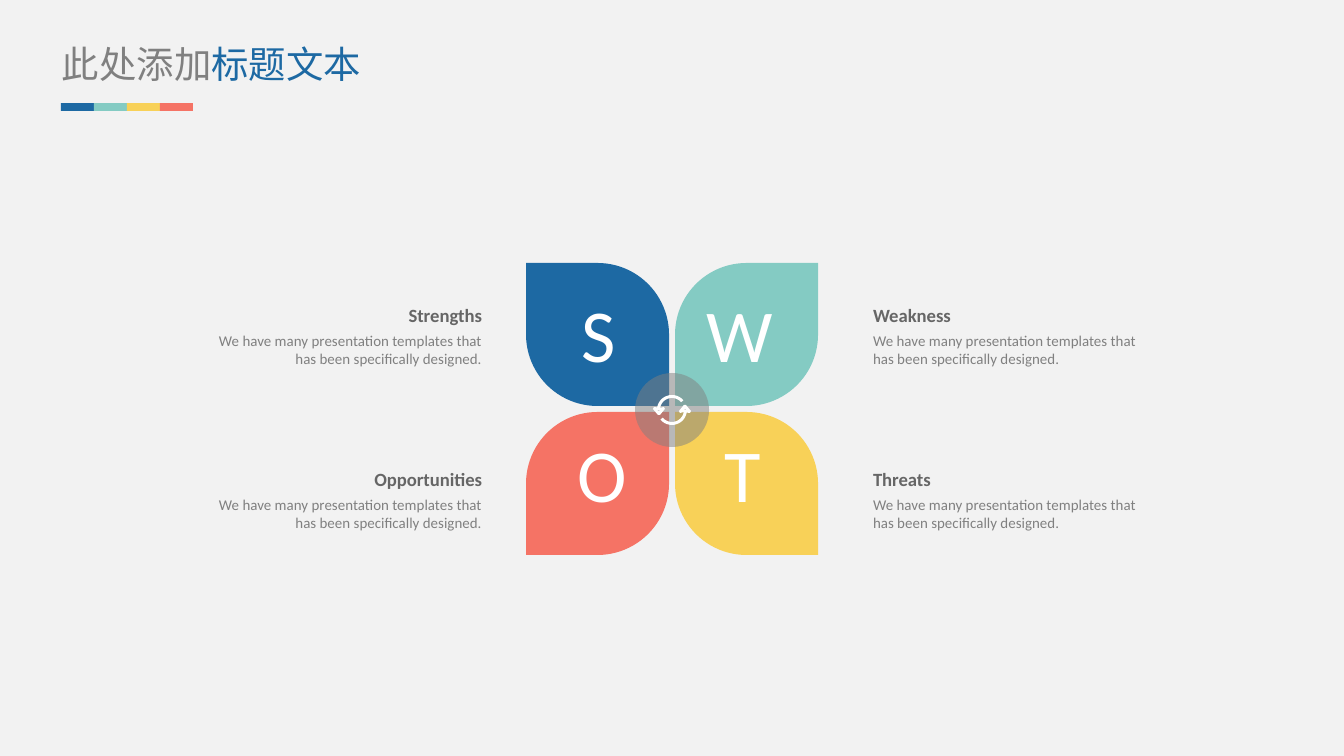
import math
from dataclasses import dataclass

from lxml import etree
from pptx import Presentation
from pptx.dml.color import RGBColor
from pptx.enum import shapes, text
from pptx.oxml.ns import qn
from pptx.util import Emu, Pt

SLIDE_WIDTH, SLIDE_HEIGHT = 1344, 756
EMU_PER_PX = 9144000 / SLIDE_WIDTH

BLUE = RGBColor(0x1D, 0x69, 0xA3)
TEAL = RGBColor(0x84, 0xCB, 0xC3)
YELLOW = RGBColor(0xF8, 0xD1, 0x58)
RED = RGBColor(0xF5, 0x73, 0x65)
GRAY = RGBColor(0x80, 0x80, 0x80)
DARK_GRAY = RGBColor(0x66, 0x66, 0x66)
WHITE = RGBColor(0xFF, 0xFF, 0xFF)
BACKGROUND = RGBColor(0xF2, 0xF2, 0xF2)

LATIN_FONT, CHINESE_FONT = "Calibri", "Noto Sans CJK SC"
DESCRIPTION = "We have many presentation templates that has been specifically designed."

PETAL_LEFT, PETAL_TOP, PETAL_SIZE, PETAL_STEP = 526, 263, 143, 149
DESCRIPTION_LEFTS, DESCRIPTION_TOP, DESCRIPTION_STEP = (207, 873), 299, 164
LETTER_TOP, LETTER_STEP = 288, 140
HUB_X, HUB_Y, HUB_SIZE = 672, 410, 74
BAR_LEFT, BAR_TOP, BAR_WIDTH, BAR_HEIGHT = 61, 103, 33, 8


@dataclass(frozen=True)
class Box:
    left: int
    top: int
    width: int
    height: int

    def emu(self) -> list[Emu]:
        return [px(v) for v in (self.left, self.top, self.width, self.height)]


@dataclass(frozen=True)
class Quadrant:
    letter: str
    heading: str
    color: RGBColor
    column: int
    row: int
    letter_left: int
    letter_width: int


QUADRANTS = (
    Quadrant("S", "Strengths", BLUE, 0, 0, 581, 35),
    Quadrant("W", "Weakness", TEAL, 1, 0, 706, 67),
    Quadrant("O", "Opportunities", RED, 0, 1, 577, 50),
    Quadrant("T", "Threats", YELLOW, 1, 1, 725, 36),
)


def px(value: float) -> Emu:
    return Emu(round(value * EMU_PER_PX))


def paint(shape, color: RGBColor):
    shape.shadow.inherit = False
    shape.fill.solid()
    shape.fill.fore_color.rgb = color
    shape.line.fill.background()
    return shape


def add_filled(parent, kind, box: Box, color: RGBColor):
    return paint(parent.add_shape(kind, *box.emu()), color)


def add_text_frame(slide, box: Box, wrap: bool = True):
    frame = slide.shapes.add_textbox(*box.emu()).text_frame
    settings = {
        "margin_left": 0, "margin_top": 0, "margin_right": 0, "margin_bottom": 0,
        "word_wrap": wrap, "auto_size": text.MSO_AUTO_SIZE.SHAPE_TO_FIT_TEXT,
    }
    for name, value in settings.items():
        setattr(frame, name, value)
    return frame


def add_run(paragraph, words: str, size: int, color: RGBColor,
            font: str = LATIN_FONT, bold: bool = False):
    run = paragraph.add_run()
    run.text = words
    for name, value in {"name": font, "size": Pt(size), "bold": bold}.items():
        setattr(run.font, name, value)
    run.font.color.rgb = color
    return run


def add_title(slide) -> None:
    paragraph = add_text_frame(slide, Box(62, 41, 409, 46)).paragraphs[0]
    for words, color in (("此处添加", GRAY), ("标题文本", BLUE)):
        run = add_run(paragraph, words, 20, color, CHINESE_FONT)
        latin = run.font._element.find(qn("a:latin"))
        east_asian = etree.Element(qn("a:ea"), typeface=CHINESE_FONT)
        latin.addnext(east_asian)


def add_color_bars(slide) -> None:
    group = slide.shapes.add_group_shape()
    for index, color in enumerate((BLUE, TEAL, YELLOW, RED)):
        box = Box(BAR_LEFT + index * BAR_WIDTH, BAR_TOP, BAR_WIDTH, BAR_HEIGHT)
        add_filled(group.shapes, shapes.MSO_SHAPE.RECTANGLE, box, color)


def add_petal(slide, quadrant: Quadrant) -> None:
    box = Box(PETAL_LEFT + quadrant.column * PETAL_STEP,
              PETAL_TOP + quadrant.row * PETAL_STEP, PETAL_SIZE, PETAL_SIZE)
    petal = add_filled(slide.shapes, shapes.MSO_SHAPE.ROUND_2_DIAG_RECTANGLE,
                       box, quadrant.color)
    # Sharp corners lie on the diagonal through the hub
    falling = quadrant.column == quadrant.row
    petal.adjustments[0] = 0 if falling else 0.5
    petal.adjustments[1] = 0.5 if falling else 0


def add_letter(slide, quadrant: Quadrant) -> None:
    box = Box(quadrant.letter_left, LETTER_TOP + quadrant.row * LETTER_STEP,
              quadrant.letter_width, 90)
    paragraph = add_text_frame(slide, box, wrap=False).paragraphs[0]
    paragraph.alignment = text.PP_ALIGN.CENTER
    add_run(paragraph, quadrant.letter, 40, WHITE)


def add_description(slide, quadrant: Quadrant) -> None:
    box = Box(DESCRIPTION_LEFTS[quadrant.column],
              DESCRIPTION_TOP + quadrant.row * DESCRIPTION_STEP, 275, 69)
    frame = add_text_frame(slide, box)
    heading, body = frame.paragraphs[0], frame.add_paragraph()
    for paragraph in (heading, body):
        paragraph.space_before = Pt(3)
        paragraph.alignment = (text.PP_ALIGN.LEFT if quadrant.column
                               else text.PP_ALIGN.RIGHT)
    heading.line_spacing = 1.2
    add_run(heading, quadrant.heading, 10, DARK_GRAY, bold=True)
    add_run(body, DESCRIPTION, 8, GRAY)


def arc(radius: int, angles: range) -> list[tuple[float, float]]:
    return [(radius * math.cos(math.radians(angle)),
             radius * math.sin(math.radians(angle))) for angle in angles]


def add_hub(slide) -> None:
    circle = add_filled(slide.shapes, shapes.MSO_SHAPE.OVAL,
                        Box(HUB_X - HUB_SIZE // 2, HUB_Y - HUB_SIZE // 2,
                            HUB_SIZE, HUB_SIZE), GRAY)
    color = circle._element.spPr.find(".//" + qn("a:srgbClr"))
    etree.SubElement(color, qn("a:alpha"), val="50000")

    # One curved arrow with a notch in its head, repeated after a half turn
    arrow = (arc(15, range(10, 141, 10)) + arc(12, range(140, 9, -10))
             + [(8, 3), (7, 1), (12, -5), (14, -5), (19, 1), (18, 3)])
    notch = [(12, 0), (13, -1), (15, 0)]
    outlines = [[(px(HUB_X + turn * x), px(HUB_Y + turn * y)) for x, y in points]
                for turn in (1, -1) for points in (arrow, notch)]
    builder = slide.shapes.build_freeform(*outlines[0][0])
    for index, outline in enumerate(outlines):
        if index:
            builder.move_to(*outline[0])
        builder.add_line_segments(outline[1:], close=True)
    paint(builder.convert_to_shape(), WHITE)


def main() -> None:
    presentation = Presentation()
    presentation.slide_width = px(SLIDE_WIDTH)
    presentation.slide_height = px(SLIDE_HEIGHT)
    slide = presentation.slides.add_slide(presentation.slide_layouts[6])
    slide.background.fill.solid()
    slide.background.fill.fore_color.rgb = BACKGROUND

    # Petals and letters, with the hub on top
    for add_part in (add_petal, add_letter):
        for quadrant in QUADRANTS:
            add_part(slide, quadrant)
    add_hub(slide)

    # Descriptions, left column first
    for quadrant in sorted(QUADRANTS, key=lambda item: item.column):
        add_description(slide, quadrant)

    # Header
    add_title(slide)
    add_color_bars(slide)
    presentation.save("out.pptx")


if __name__ == "__main__":
    main()
